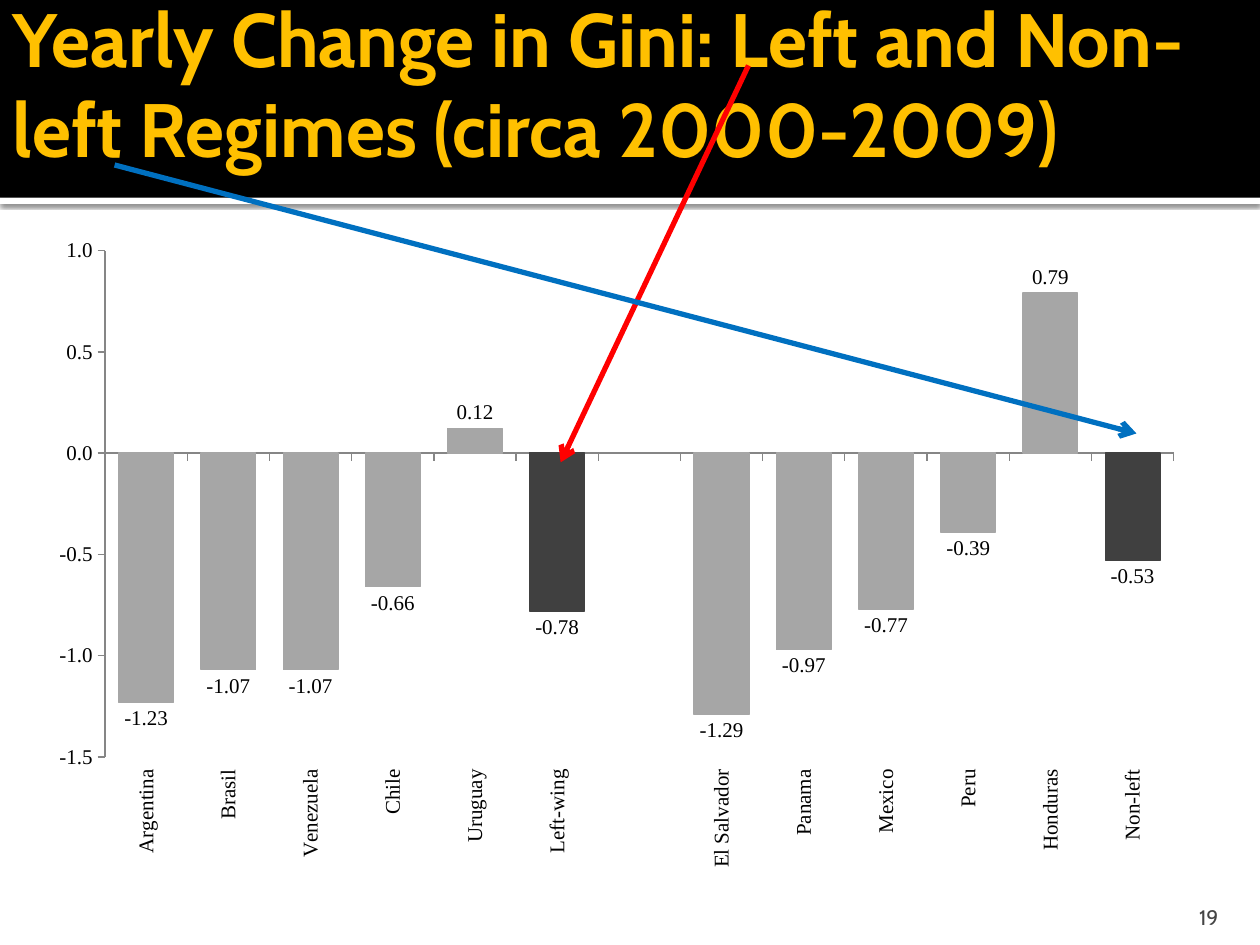
"""Build a slide comparing yearly Gini change in left and non-left regimes."""
from dataclasses import dataclass

from lxml import etree
from pptx import Presentation
from pptx.chart.data import CategoryChartData
from pptx.dml.color import RGBColor
from pptx.enum.chart import XL_CHART_TYPE, XL_LABEL_POSITION, XL_TICK_LABEL_POSITION, XL_TICK_MARK
from pptx.enum.shapes import MSO_CONNECTOR, MSO_SHAPE
from pptx.enum.text import MSO_ANCHOR, MSO_AUTO_SIZE, PP_ALIGN
from pptx.oxml import parse_xml
from pptx.oxml.ns import nsdecls, qn
from pptx.util import Pt

COLUMNS = XL_CHART_TYPE.COLUMN_CLUSTERED
OUTSIDE_END = XL_LABEL_POSITION.OUTSIDE_END
LOW = XL_TICK_LABEL_POSITION.LOW
TICK_OUT, TICK_NONE = XL_TICK_MARK.OUTSIDE, XL_TICK_MARK.NONE
STRAIGHT, RECTANGLE = MSO_CONNECTOR.STRAIGHT, MSO_SHAPE.RECTANGLE
MIDDLE, BOTTOM = MSO_ANCHOR.MIDDLE, MSO_ANCHOR.BOTTOM
LEFT, RIGHT = PP_ALIGN.LEFT, PP_ALIGN.RIGHT
FIXED_SIZE = MSO_AUTO_SIZE.NONE

BLACK = RGBColor(0x00, 0x00, 0x00)
WHITE = RGBColor(0xFF, 0xFF, 0xFF)
GOLD = RGBColor(0xFF, 0xC0, 0x00)
RED = RGBColor(0xFF, 0x00, 0x00)
BLUE = RGBColor(0x00, 0x70, 0xC0)
COUNTRY_GREY = RGBColor(0xA6, 0xA6, 0xA6)
AVERAGE_GREY = RGBColor(0x40, 0x40, 0x40)
AXIS_GREY = RGBColor(0x86, 0x86, 0x86)
NUMBER_GREY = RGBColor(0x45, 0x45, 0x45)

HEADING_FONT, CHART_FONT = "Cabin", "Times New Roman"
PAGE_WIDTH, PAGE_HEIGHT = 720, 540
BAND_HEIGHT = 113
AVERAGES = ("Left-wing", "Non-left")
GINI_CHANGES = (
    ("Argentina", -1.23), ("Brasil", -1.07), ("Venezuela", -1.07),
    ("Chile", -0.66), ("Uruguay", 0.12), ("Left-wing", -0.78),
    ("", None),
    ("El Salvador", -1.29), ("Panama", -0.97), ("Mexico", -0.77),
    ("Peru", -0.39), ("Honduras", 0.79), ("Non-left", -0.53),
)
PLOT_AREA = {"x": 0.06, "y": 0.04, "w": 0.92, "h": 0.77}


@dataclass(frozen=True)
class Band:
    top: float
    height: float
    color: RGBColor
    shadowed: bool


@dataclass(frozen=True)
class Arrow:
    start: tuple[float, float]
    end: tuple[float, float]
    color: RGBColor


BANDS = (
    Band(BAND_HEIGHT, 3.6, WHITE, True),
    Band(0, BAND_HEIGHT, BLACK, False),
)
ARROWS = (
    Arrow((427.7, 37.4), (320.4, 264.2), RED),
    Arrow((65.5, 94.3), (649.4, 247.7), BLUE),
)


def draw_band(page, band: Band) -> None:
    shape = page.shapes.add_shape(RECTANGLE, 0, Pt(band.top), Pt(PAGE_WIDTH), Pt(band.height))
    shape.shadow.inherit = False
    shape.fill.solid()
    shape.fill.fore_color.rgb = band.color
    shape.line.fill.background()
    if band.shadowed:
        effects = shape.element.spPr.find(qn("a:effectLst"))
        effects.append(parse_xml(
            f'<a:outerShdw {nsdecls("a")} blurRad="{Pt(2.5)}" dist="{Pt(0.8)}" dir="5400000" '
            'rotWithShape="0"><a:srgbClr val="000000"><a:alpha val="60000"/></a:srgbClr></a:outerShdw>'
        ))


def draw_arrow(page, arrow: Arrow) -> None:
    points = [Pt(value) for value in arrow.start + arrow.end]
    connector = page.shapes.add_connector(STRAIGHT, *points)
    connector.line.color.rgb = arrow.color
    connector.line.width = Pt(3)
    etree.SubElement(connector.line._get_or_add_ln(), qn("a:tailEnd"), type="arrow")
    etree.SubElement(connector.element.spPr, qn("a:effectLst"))


def write_text(box, text: str, size: float, color: RGBColor, align, bold: bool = False) -> None:
    box.text_frame.text = text
    paragraph = box.text_frame.paragraphs[0]
    paragraph.alignment = align
    font = paragraph.runs[0].font
    font.name, font.size, font.bold = HEADING_FONT, Pt(size), bold
    font.color.rgb = color


def set_frame(box, anchor, insets: tuple[float, float, float, float]) -> None:
    frame = box.text_frame
    frame.word_wrap = True
    frame.auto_size = FIXED_SIZE
    frame.vertical_anchor = anchor
    frame.margin_left, frame.margin_top, frame.margin_right, frame.margin_bottom = map(Pt, insets)


def draw_title(page) -> None:
    title = page.shapes.title
    page.shapes.element.append(title.element)
    title.left, title.top, title.width, title.height = Pt(0), Pt(12.2), Pt(PAGE_WIDTH), Pt(121.7)
    set_frame(title, MIDDLE, (7.2, 3.6, 3.6, 55.6))
    write_text(title, "Yearly Change in Gini: Left and Non-left Regimes (circa 2000-2009)",
               43.2, GOLD, LEFT, True)


def draw_page_number(page) -> None:
    box = page.shapes.add_textbox(Pt(645.8), Pt(509.8), Pt(57.6), Pt(21.6))
    set_frame(box, BOTTOM, (7.2, 3.6, 7.2, 0))
    write_text(box, "19", 12, NUMBER_GREY, RIGHT)


def format_axes(chart) -> None:
    for axis in (chart.category_axis, chart.value_axis):
        axis.has_major_gridlines = False
        axis.major_tick_mark, axis.minor_tick_mark = TICK_OUT, TICK_NONE
        axis.format.line.color.rgb = AXIS_GREY
        axis.format.line.width = Pt(0.75)
        axis.tick_labels.font.size = Pt(12)
    chart.category_axis.tick_label_position = LOW
    for body in chart.element.xpath(".//c:catAx/c:txPr/a:bodyPr"):
        body.set("rot", "-5400000")
        body.set("vert", "horz")
    scale = chart.value_axis
    scale.minimum_scale, scale.maximum_scale, scale.major_unit = -1.5, 1, 0.5
    scale.tick_labels.number_format = "0.0"
    scale.tick_labels.number_format_is_linked = False


def format_columns(plot) -> None:
    plot.gap_width = 50
    plot.vary_by_categories = False
    series = plot.series[0]
    series.invert_if_negative = False
    averages = [index for index, (name, _) in enumerate(GINI_CHANGES) if name in AVERAGES]
    targets = [(series, COUNTRY_GREY)] + [(series.points[index], AVERAGE_GREY) for index in averages]
    for target, color in targets:
        target.format.fill.solid()
        target.format.fill.fore_color.rgb = color
        target.format.line.color.rgb = color
        target.format.line.width = Pt(0.75)
    plot.has_data_labels = True
    labels = plot.data_labels
    labels.show_value = True
    labels.position = OUTSIDE_END
    labels.number_format, labels.number_format_is_linked = "#,##0.00", False


def place_plot_area(chart) -> None:
    area = chart.element.find(".//" + qn("c:plotArea"))
    for layout in area.findall(qn("c:layout")):
        area.remove(layout)
    layout = etree.Element(qn("c:layout"))
    manual = etree.SubElement(layout, qn("c:manualLayout"))
    settings = {"layoutTarget": "inner", "xMode": "edge", "yMode": "edge", **PLOT_AREA}
    for name, value in settings.items():
        etree.SubElement(manual, qn(f"c:{name}"), val=str(value))
    area.insert(0, layout)


def draw_chart(page) -> None:
    data = CategoryChartData()
    data.categories = [name for name, _ in GINI_CHANGES]
    data.add_series("Series 1", [change for _, change in GINI_CHANGES])
    chart = page.shapes.add_chart(COLUMNS, Pt(20.2), Pt(128.2), Pt(663.8), Pt(375.8), data).chart
    chart.has_legend = False
    chart.has_title = False
    chart.font.name, chart.font.size = CHART_FONT, Pt(12)
    chart.font.color.rgb = BLACK
    format_axes(chart)
    format_columns(chart.plots[0])
    place_plot_area(chart)


def main() -> None:
    deck = Presentation()
    deck.slide_width, deck.slide_height = Pt(PAGE_WIDTH), Pt(PAGE_HEIGHT)
    page = deck.slides.add_slide(deck.slide_layouts[5])
    for band in BANDS:
        draw_band(page, band)
    draw_title(page)
    draw_page_number(page)
    draw_chart(page)
    for arrow in ARROWS:
        draw_arrow(page, arrow)
    deck.save("out.pptx")


if __name__ == "__main__":
    main()
